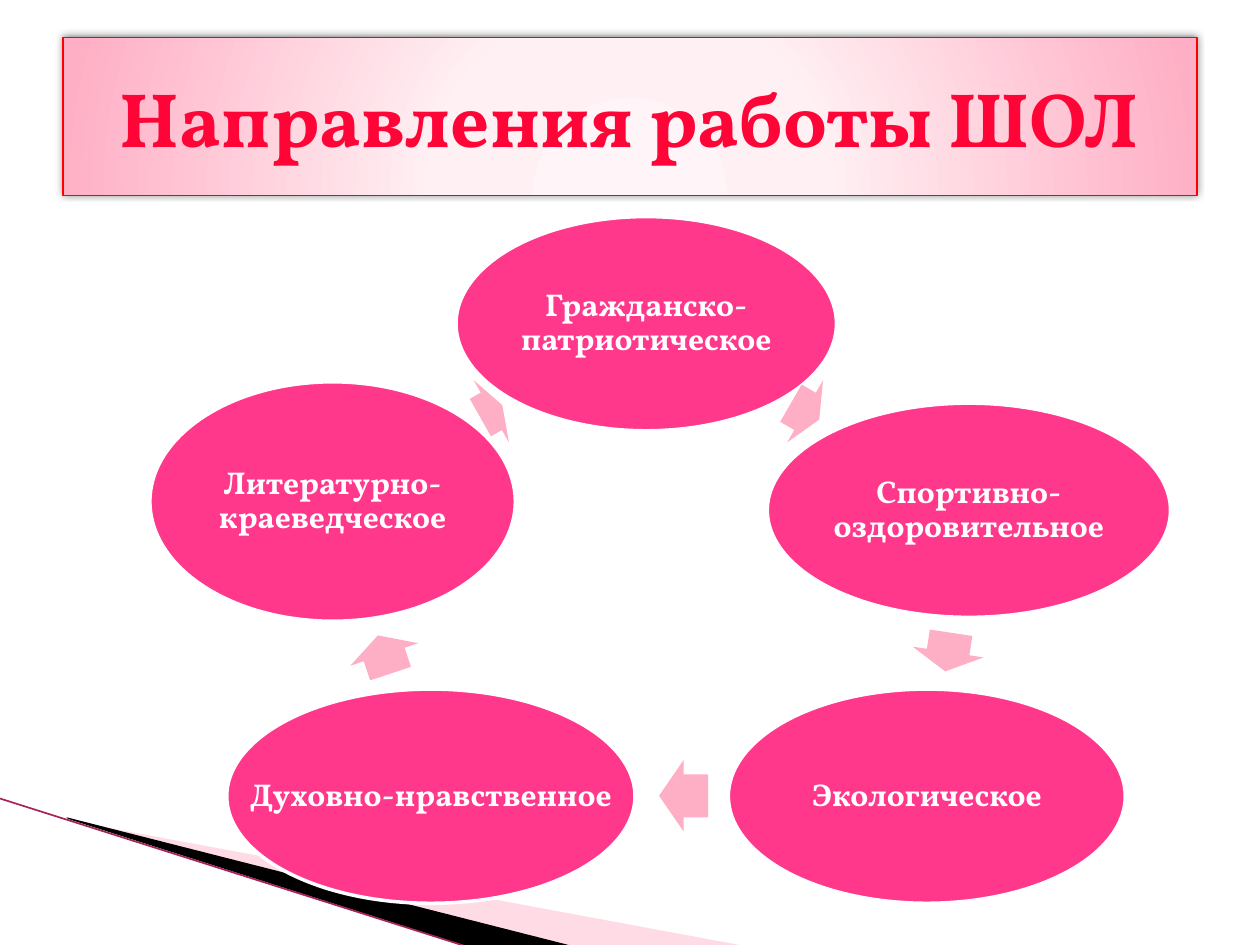
from lxml import etree
from pptx import Presentation
from pptx import util as u
from pptx.dml.color import RGBColor
from pptx.enum import shapes, text
from pptx.oxml.ns import qn

COLOURS = {
    "red": "FF0537", "border": "FF0000", "oval": "FF388C", "arrow": "FFAFC5",
    "white": "FFFFFF", "black": "000000", "wedge": "FFA5BF", "edge": "A8235A",
}
TITLE_STOPS = [(0, "FFF4F7"), (34, "FFF0F3"), (100, "FFAFC5")]
TITLE_FONT = {"name": "Vollkorn", "size": u.Pt(44), "bold": True}
LABEL_FONT = {"name": "Vollkorn", "size": u.Pt(18), "bold": True}


def colour(name):
    return RGBColor.from_string(COLOURS[name])


def add_xml(parent, tag, **attributes):
    values = {key: str(value) for key, value in attributes.items()}
    return etree.SubElement(parent, qn(tag), values)


class CycleSlide:
    def __init__(self, slide):
        self.shapes = slide.shapes

    def paint(self, shape, fill, line=None, width=0):
        shape.shadow.inherit = False
        shape.fill.solid()
        shape.fill.fore_color.rgb = colour(fill)
        if line:
            shape.line.color.rgb = colour(line)
            shape.line.width = u.Pt(width)
        else:
            shape.line.fill.background()

    def preset(self, kind, frame, fill, line=None, width=0):
        shape = self.shapes.add_shape(kind, *map(u.Pt, frame))
        self.paint(shape, fill, line, width)
        return shape

    def add_words(self, box, words, font, ink, spacing=1.0):
        frame = box.text_frame
        frame.word_wrap = True
        frame.vertical_anchor = text.MSO_ANCHOR.MIDDLE
        para = frame.paragraphs[0]
        para.alignment = text.PP_ALIGN.CENTER
        para.line_spacing = spacing
        span = para.add_run()
        span.text = words
        for key, value in font.items():
            setattr(span.font, key, value)
        span.font.color.rgb = colour(ink)

    def wedge(self, points, fill, alpha=100):
        points = [(u.Pt(x), u.Pt(y)) for x, y in points]
        builder = self.shapes.build_freeform(*points[0], scale=1.0)
        builder.add_line_segments(points[1:], close=True)
        shape = builder.convert_to_shape()
        self.paint(shape, fill)
        if alpha < 100:
            tint = shape._element.spPr.find(qn("a:solidFill"))[0]
            add_xml(tint, "a:alpha", val=alpha * 1000)

    def line(self, start, end, ink, width):
        line = self.shapes.add_connector(
            shapes.MSO_CONNECTOR.STRAIGHT, *map(u.Pt, start + end))
        line.line.color.rgb = colour(ink)
        line.line.width = u.Pt(width)
        add_xml(line._element.spPr, "a:effectLst")

    def title(self, words, frame):
        box = self.preset(shapes.MSO_SHAPE.RECTANGLE, frame, "white", "border", 0.75)
        properties = box._element.spPr
        # Radial fill centred below the banner
        gradient = etree.Element(qn("a:gradFill"))
        stops = add_xml(gradient, "a:gsLst")
        for position, value in TITLE_STOPS:
            stop = add_xml(stops, "a:gs", pos=position * 1000)
            add_xml(stop, "a:srgbClr", val=value)
        circle = add_xml(gradient, "a:path", path="circle")
        add_xml(circle, "a:fillToRect", l=50000, t=155000, r=50000, b=-55000)
        properties.replace(properties.find(qn("a:solidFill")), gradient)
        # Soft shadow
        shadow = add_xml(properties.find(qn("a:effectLst")), "a:outerShdw",
                         blurRad=u.Pt(5), dist=u.Pt(2), dir=245 * 60000, rotWithShape=0)
        add_xml(add_xml(shadow, "a:srgbClr", val=COLOURS["black"]), "a:alpha", val=50000)
        self.add_words(box, words, TITLE_FONT, "red")

    def oval(self, words, frame):
        self.preset(shapes.MSO_SHAPE.OVAL, frame, "oval", "white", 2)
        # The label uses the full width of the oval
        label = self.shapes.add_textbox(*map(u.Pt, frame))
        for side in ("left", "top", "right", "bottom"):
            setattr(label.text_frame, f"margin_{side}", u.Pt(2))
        self.add_words(label, words, LABEL_FONT, "white", 0.9)

    def arrow(self, left, top, width, angle):
        shape = self.preset(shapes.MSO_SHAPE.RIGHT_ARROW, (left, top, width, 41), "arrow")
        shape.adjustments[0] = 0.6
        shape.adjustments[1] = 0.5
        shape.rotation = angle


# Each direction: label, oval frame, arrow that follows it (left, top, width, angle)
DIRECTIONS = [
    ("Гражданско-патриотическое", (260.6, 123.8, 217.4, 122.4), (450.7, 214.6, 18.7, 30)),
    ("Спортивно-оздоровительное", (438.5, 230.4, 230.4, 122.4), (530.6, 352.1, 22.3, 98.6)),
    ("Экологическое", (416.2, 393.8, 226.8, 122.4), (376.6, 434.2, 28.1, 180)),
    ("Духовно-нравственное", (129.6, 393.8, 233.3, 122.4), (208.1, 353.5, 23, 251.6)),
    ("Литературно-краеведческое", (85.7, 218.2, 208.8, 136.8), (273.6, 214.6, 14.4, 330.5)),
]


def main():
    deck = Presentation()
    deck.slide_width, deck.slide_height = u.Pt(720), u.Pt(540)
    page = CycleSlide(deck.slides.add_slide(deck.slide_layouts[6]))

    # Corner decoration
    page.wedge([(40, 469), (428, 541), (328, 541), (40, 468)], "wedge", 40)
    page.wedge([(38, 467), (329, 541), (268, 541), (39, 468)], "black")
    page.line((-1, 456), (267, 541), "edge", 0.95)

    # Banner
    page.title("Направления работы ШОЛ", (36, 21.6, 648, 90))

    # Cycle of directions
    for words, frame, arrow in DIRECTIONS:
        page.oval(words, frame)
        page.arrow(*arrow)

    deck.save("out.pptx")


if __name__ == "__main__":
    main()
